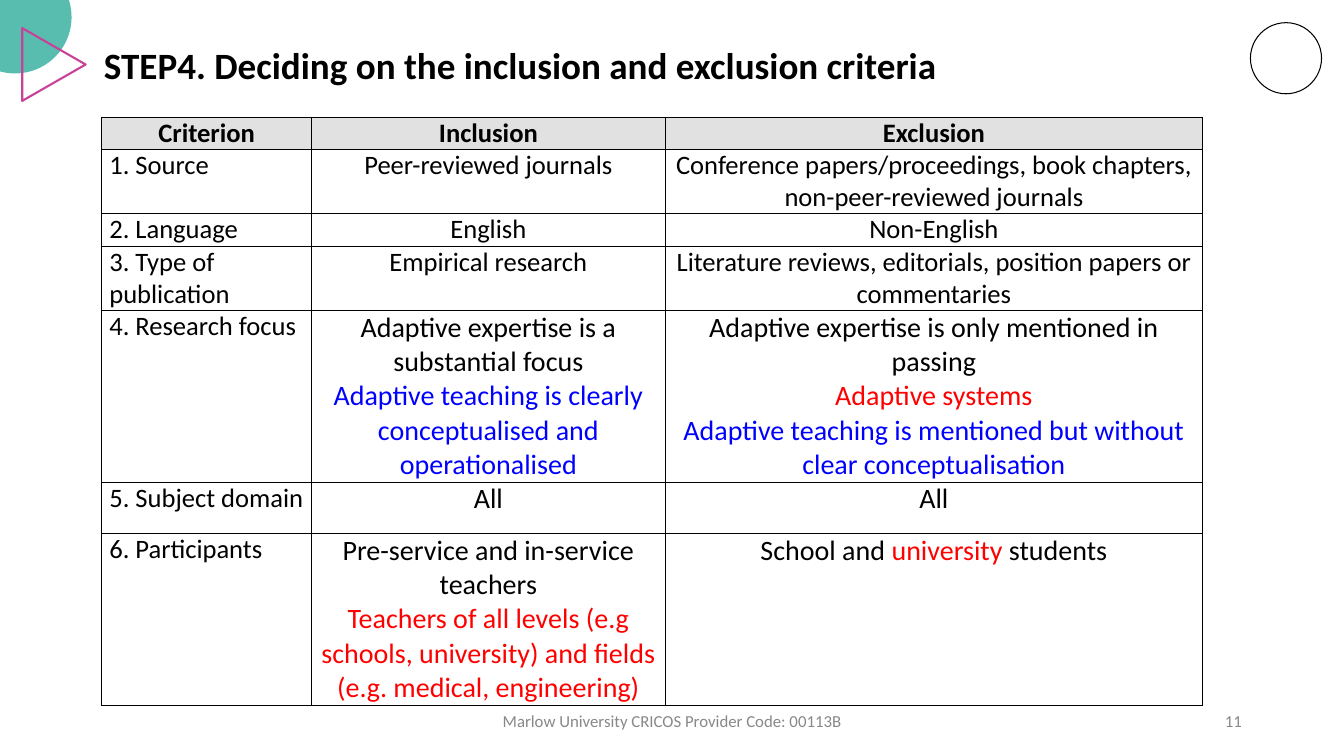
"""Build the slide on inclusion and exclusion criteria for a literature review."""
import math
from dataclasses import dataclass

import lxml.etree
import pptx
import pptx.dml.color
import pptx.enum.shapes
import pptx.enum.text
import pptx.oxml.ns
import pptx.util

Pt = pptx.util.Pt
qn = pptx.oxml.ns.qn
ALIGN = pptx.enum.text.PP_ALIGN
ANCHOR = pptx.enum.text.MSO_ANCHOR


@dataclass(frozen=True)
class Theme:
    font: str = "Calibri"
    black: str = "000000"
    blue: str = "0000FF"
    red: str = "FF0000"
    grey: str = "888888"
    header: str = "E1E1E1"
    teal: str = "58BCAF"
    magenta: str = "C74298"
    title: float = 26.5
    table: float = 19
    detail: float = 20
    footer: float = 12


THEME = Theme()
BLUE, RED = THEME.blue, THEME.red

HEADER = ["Criterion", "Inclusion", "Exclusion"]
CRITERIA = [
    ["1. Source", "Peer-reviewed journals",
     "Conference papers/proceedings, book chapters, non-peer-reviewed journals"],
    ["2. Language", "English", "Non-English"],
    ["3. Type of publication", "Empirical research",
     "Literature reviews, editorials, position papers or commentaries"],
    ["4. Research focus",
     [["Adaptive expertise is a substantial focus"],
      [("Adaptive teaching is clearly conceptualised and operationalised", BLUE)]],
     [["Adaptive expertise is only mentioned in passing"],
      [("Adaptive systems", RED)],
      [("Adaptive teaching is mentioned but without clear conceptualisation", BLUE)]]],
    ["5. Subject domain", "All", "All"],
    ["6. Participants",
     [["Pre-service and in-service teachers"],
      [("Teachers of all levels (e.g schools, university) and fields "
        "(e.g. medical, engineering)", RED)]],
     [["School and ", ("university", RED), " students"]]],
]
COLUMN_WIDTHS = [149.8, 252.7, 383.8]
ROW_HEIGHTS = [23, 46, 23, 46, 122, 36.7, 122]
FIRST_DETAIL_ROW = 4


class SlideBuilder:
    def __init__(self, slide, theme):
        self.slide = slide
        self.theme = theme

    def color(self, value):
        return pptx.dml.color.RGBColor.from_string(value)

    def format_run(self, r, size, color, bold=False):
        r.font.name = self.theme.font
        r.font.size = Pt(size)
        r.font.bold = bold
        r.font.color.rgb = self.color(color)

    def paint(self, sp, fill=None, line=None, weight=0):
        sp.shadow.inherit = False
        if fill:
            sp.fill.solid()
            sp.fill.fore_color.rgb = self.color(fill)
        else:
            sp.fill.background()
        if line:
            sp.line.color.rgb = self.color(line)
            sp.line.width = Pt(weight)
        else:
            sp.line.fill.background()

    def fill_text(self, sp, text, size, color, align, bold=False):
        tf = sp.text_frame
        tf.text = text
        tf.word_wrap = True
        tf.auto_size = pptx.enum.text.MSO_AUTO_SIZE.NONE
        tf.vertical_anchor = ANCHOR.MIDDLE
        p = tf.paragraphs[0]
        p.alignment = align
        self.format_run(p.runs[0], size, color, bold)

    def title(self, text, left, top, width, height):
        sp = self.slide.shapes.title
        sp.left, sp.top, sp.width, sp.height = map(Pt, (left, top, width, height))
        self.fill_text(sp, text, self.theme.title, self.theme.black, ALIGN.LEFT, True)

    def footer(self, text, left, top, width, height, align):
        sp = self.slide.shapes.add_textbox(*map(Pt, (left, top, width, height)))
        self.fill_text(sp, text, self.theme.footer, self.theme.grey, align)

    def oval(self, left, top, width, height, **style):
        sp = self.slide.shapes.add_shape(
            pptx.enum.shapes.MSO_SHAPE.OVAL, *map(Pt, (left, top, width, height)))
        self.paint(sp, **style)

    def polygon(self, points, **style):
        start, *rest = [(Pt(x), Pt(y)) for x, y in points]
        builder = self.slide.shapes.build_freeform(*start)
        builder.add_line_segments(rest, close=True)
        self.paint(builder.convert_to_shape(), **style)

    def border(self, cell, weight):
        tcPr = cell._tc.get_or_add_tcPr()
        for side in ("a:lnL", "a:lnR", "a:lnT", "a:lnB"):
            ln = lxml.etree.SubElement(tcPr, qn(side), w=str(int(Pt(weight))))
            fill = lxml.etree.SubElement(ln, qn("a:solidFill"))
            lxml.etree.SubElement(fill, qn("a:srgbClr"), val=self.theme.black)

    def cell(self, cell, content, size, align, fill=None, bold=False):
        self.border(cell, 0.5)
        if fill:
            cell.fill.solid()
            cell.fill.fore_color.rgb = self.color(fill)
        else:
            cell.fill.background()
        cell.margin_left = cell.margin_right = Pt(5.4)
        cell.margin_top = cell.margin_bottom = 0
        cell.vertical_anchor = ANCHOR.TOP
        tf = cell.text_frame
        paragraphs = [[content]] if isinstance(content, str) else content
        for i, parts in enumerate(paragraphs):
            p = tf.add_paragraph() if i else tf.paragraphs[0]
            p.alignment = align
            for part in parts:
                text, color = (part, self.theme.black) if isinstance(part, str) else part
                r = p.add_run()
                r.text = text
                self.format_run(r, size, color, bold)

    def table(self, rows, left, top, widths, heights):
        frame = self.slide.shapes.add_table(
            len(rows), len(widths), Pt(left), Pt(top), Pt(sum(widths)), Pt(sum(heights)))
        table = frame.table
        table.first_row = table.horz_banding = False
        for column, width in zip(table.columns, widths):
            column.width = Pt(width)
        for i, (row, height) in enumerate(zip(rows, heights)):
            table.rows[i].height = Pt(height)
            for j, content in enumerate(row):
                is_header = i == 0
                is_detail = i >= FIRST_DETAIL_ROW and j > 0
                self.cell(
                    table.cell(i, j), content,
                    self.theme.detail if is_detail else self.theme.table,
                    ALIGN.CENTER if is_header or j else ALIGN.LEFT,
                    self.theme.header if is_header else None, is_header)


def corner_disc(cx, cy, radius, steps=48):
    start = math.asin(-cy / radius)
    end = math.acos(-cx / radius)
    angles = [start + (end - start) * i / steps for i in range(steps + 1)]
    arc = [(cx + radius * math.cos(a), cy + radius * math.sin(a)) for a in angles]
    return [(0, 0)] + arc


def main():
    prs = pptx.Presentation()
    prs.slide_width, prs.slide_height = Pt(960), Pt(540)
    s = SlideBuilder(prs.slides.add_slide(prs.slide_layouts[5]), THEME)
    s.oval(893.2, 16.2, 50.8, 50.8, line=THEME.black, weight=0.75)
    s.polygon(corner_disc(10.8, 12.2, 40.3), fill=THEME.teal)
    s.polygon([(15.9, 20.1), (61.2, 46.1), (15.9, 72.1)], line=THEME.magenta, weight=1.5)
    s.title("STEP4. Deciding on the inclusion and exclusion criteria", 67, 9.4, 627.8, 73.4)
    s.footer("11", 678.2, 500.4, 216, 28.8, ALIGN.RIGHT)
    s.footer("Marlow University CRICOS Provider Code: 00113B",
             318.2, 500.4, 324, 28.8, ALIGN.CENTER)
    s.table([HEADER] + CRITERIA, 72.7, 83.5, COLUMN_WIDTHS, ROW_HEIGHTS)
    prs.save("out.pptx")


if __name__ == "__main__":
    main()
